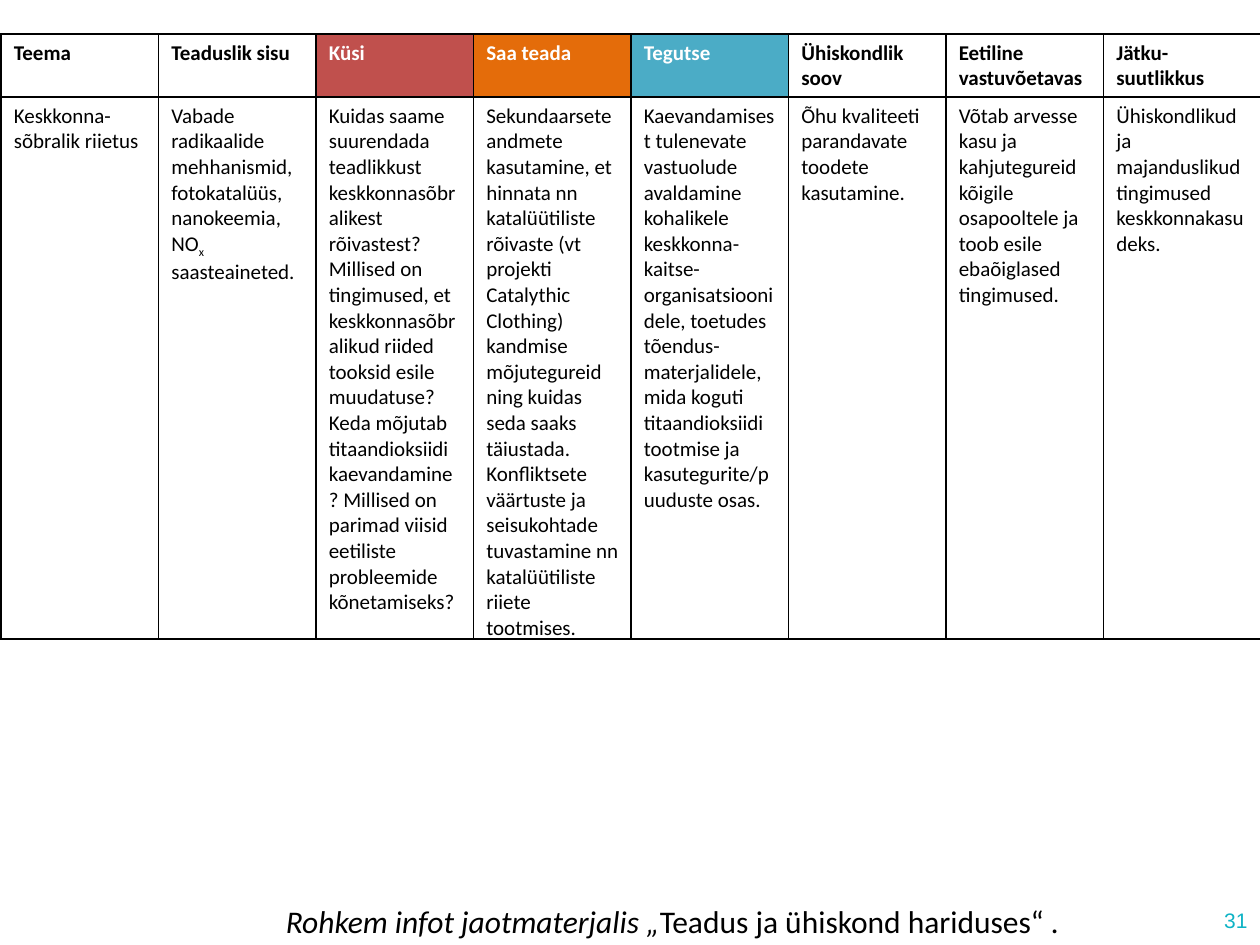
from lxml import etree
from pptx import Presentation
from pptx.dml.color import RGBColor
from pptx.enum.text import MSO_ANCHOR, PP_ALIGN
from pptx.oxml.ns import qn
from pptx.util import Inches, Pt

LEFT, RIGHT = PP_ALIGN.LEFT, PP_ALIGN.RIGHT
TOP, MIDDLE = MSO_ANCHOR.TOP, MSO_ANCHOR.MIDDLE
BLANK = 6

COLORS = {
    "text": "000000", "white": "FFFFFF", "ask": "C0504D",
    "find": "E46C0A", "act": "4BACC6", "number": "0EB3C5",
}

# Each column: heading, heading fill, body runs as (text, format)
COLUMNS = [
    ("Teema", "white", [("Keskkonna-sõbralik riietus", {})]),
    ("Teaduslik sisu", "white", [
        ("Vabade radikaalide mehhanismid, fotokatalüüs, nanokeemia, NO", {}),
        ("x ", {"baseline": -25}),
        ("saasteaineted.", {})]),
    ("Küsi", "ask", [(
        "Kuidas saame suurendada teadlikkust keskkonnasõbralikest rõivastest? "
        "Millised on tingimused, et keskkonnasõbralikud riided tooksid esile "
        "muudatuse? Keda mõjutab titaandioksiidi kaevandamine? Millised on "
        "parimad viisid eetiliste probleemide kõnetamiseks?", {})]),
    ("Saa teada", "find", [(
        "Sekundaarsete andmete kasutamine, et hinnata nn katalüütiliste rõivaste "
        "(vt projekti Catalythic Clothing) kandmise mõjutegureid ning kuidas seda "
        "saaks täiustada. Konfliktsete väärtuste ja seisukohtade tuvastamine nn "
        "katalüütiliste riiete tootmises.", {})]),
    ("Tegutse", "act", [(
        "Kaevandamisest tulenevate vastuolude avaldamine kohalikele "
        "keskkonna-kaitse-organisatsioonidele, toetudes tõendus-materjalidele, "
        "mida koguti titaandioksiidi tootmise ja kasutegurite/puuduste osas.", {})]),
    ("Ühiskondlik soov", "white", [
        ("Õhu kvaliteeti parandavate toodete kasutamine.", {})]),
    ("Eetiline vastuvõetavas", "white", [(
        "Võtab arvesse kasu ja kahjutegureid kõigile osapooltele ja toob esile "
        "ebaõiglased tingimused.", {})]),
    ("Jätku-suutlikkus", "white", [
        ("Ühiskondlikud ja majanduslikud tingimused keskkonnakasudeks.", {})]),
]


class Deck:
    """Holds the text style and the current slide; lengths are in inches."""

    def __init__(self, prs, font="Calibri", size=12):
        self.slide = prs.slides.add_slide(prs.slide_layouts[BLANK])
        self.font, self.size = font, size

    def add_runs(self, p, runs, color="text", size=None, font=None):
        for text, fmt in runs:
            r = p.add_run()
            r.text = text
            r.font.name = font or self.font
            r.font.size = Pt(size or self.size)
            r.font.color.rgb = RGBColor.from_string(COLORS[color])
            r.font.bold = fmt.get("bold", False)
            r.font.italic = fmt.get("italic", False)
            if "baseline" in fmt:
                r._r.get_or_add_rPr().set("baseline", str(fmt["baseline"] * 1000))

    def text(self, box, runs, align=LEFT, anchor=TOP, wrap=True, **style):
        tf = self.slide.shapes.add_textbox(*map(Inches, box)).text_frame
        tf.word_wrap = wrap
        tf.vertical_anchor = anchor
        tf.paragraphs[0].alignment = align
        self.add_runs(tf.paragraphs[0], runs, **style)

    def borders(self, cell, width=1):
        tcPr = cell._tc.get_or_add_tcPr()
        for i, side in enumerate(("lnL", "lnR", "lnT", "lnB")):
            ln = etree.Element(qn(f"a:{side}"), w=str(Pt(width)))
            fill = etree.SubElement(ln, qn("a:solidFill"))
            etree.SubElement(fill, qn("a:srgbClr"), val=COLORS["text"])
            tcPr.insert(i, ln)

    def cell(self, cell, runs, fill="white", color="text"):
        cell.margin_bottom = 0
        cell.fill.solid()
        cell.fill.fore_color.rgb = RGBColor.from_string(COLORS[fill])
        self.borders(cell)
        self.add_runs(cell.text_frame.paragraphs[0], runs, color)

    def table(self, left, top, col_width, row_heights, columns):
        n = len(columns)
        table = self.slide.shapes.add_table(
            len(row_heights), n, Inches(left), Inches(top),
            Inches(col_width * n), Inches(sum(row_heights))).table
        table.first_row = table.horz_banding = False
        for row, height in zip(table.rows, row_heights):
            row.height = Inches(height)
        for i, (heading, fill, body) in enumerate(columns):
            table.columns[i].width = Inches(col_width)
            color = "text" if fill == "white" else "white"
            self.cell(table.cell(0, i), [(heading, {"bold": True})], fill, color)
            self.cell(table.cell(1, i), body)


def main():
    prs = Presentation()
    prs.slide_width, prs.slide_height = Inches(10), Inches(7.5)
    deck = Deck(prs)

    # Slide number
    deck.text((8, 7.1, 2, 0.4), [("31", {})], RIGHT, MIDDLE,
              color="number", font="Arial")

    # Topic table
    deck.table(0.01, 0.27, 1.25, (0.5, 4.3), COLUMNS)

    # Reference to the handout
    deck.text((2.17, 7.11, 6.4, 0.4), [
        ("Rohkem infot jaotmaterjalis „", {"italic": True}),
        ("Teadus ja ühiskond hariduses“", {}),
        (" .", {"italic": True})], wrap=False, size=18)

    prs.save("out.pptx")


if __name__ == "__main__":
    main()
